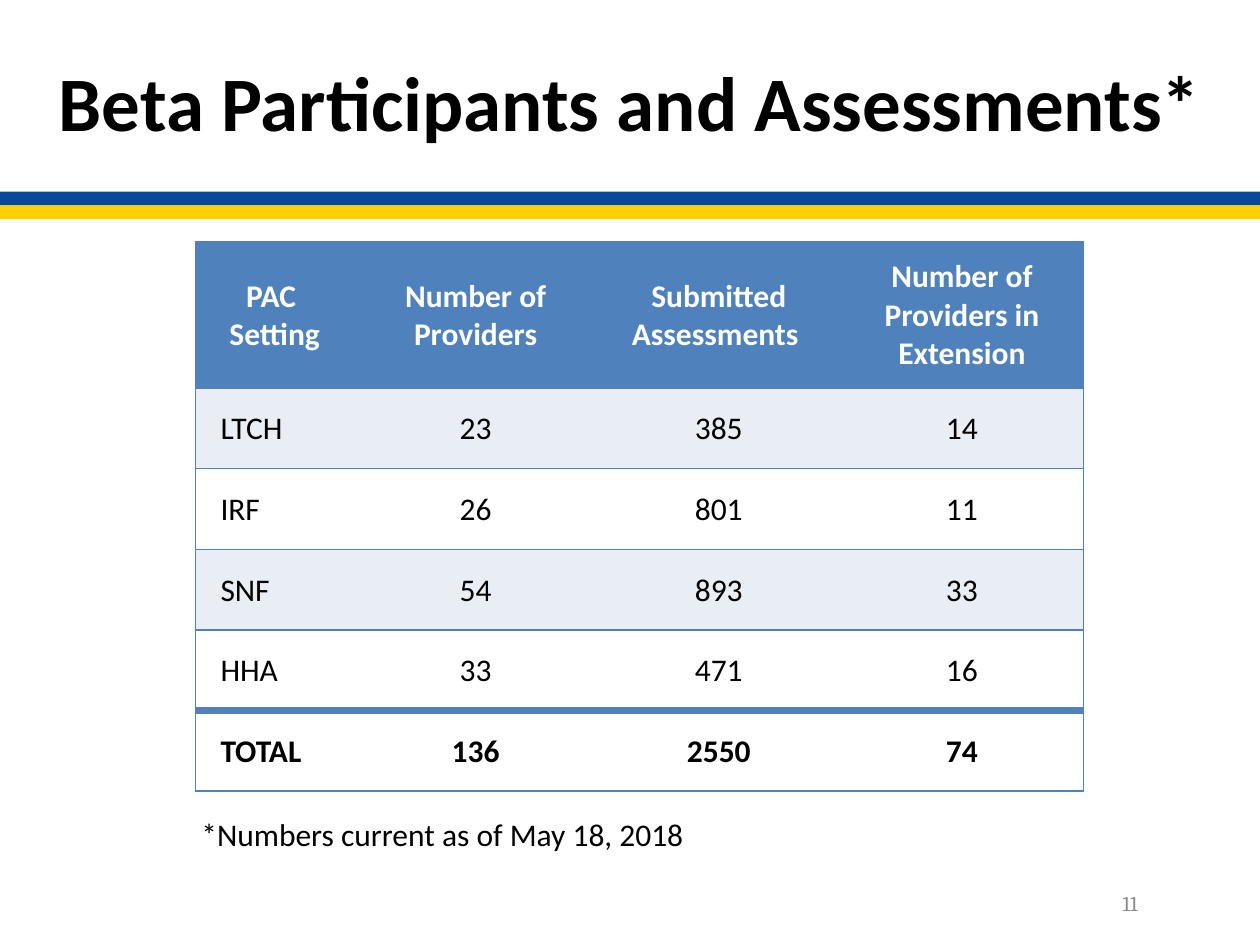
from lxml import etree
from pptx import Presentation
from pptx.dml.color import RGBColor
from pptx.enum.shapes import MSO_SHAPE
from pptx.enum.text import MSO_ANCHOR, PP_ALIGN
from pptx.oxml.ns import qn
from pptx.util import Inches, Pt

RECTANGLE = MSO_SHAPE.RECTANGLE
MIDDLE, TOP = MSO_ANCHOR.MIDDLE, MSO_ANCHOR.TOP
LEFT, CENTER = PP_ALIGN.LEFT, PP_ALIGN.CENTER

# Content
TITLE = "Beta Participants and Assessments*"
HEADER = ["PAC \nSetting", "Number of Providers", "Submitted Assessments ",
          "Number of Providers in Extension"]
SETTINGS = [
    ("LTCH", 23, 385, 14),
    ("IRF", 26, 801, 11),
    ("SNF", 54, 893, 33),
    ("HHA", 33, 471, 16),
]
TOTAL = ("TOTAL", 136, 2550, 74)
FOOTNOTE = "*Numbers current as of May 18, 2018"
PAGE_NUMBER = "11"

COLORS = {"black": "000000", "white": "FFFFFF", "gray": "888888",
          "blue": "08499C", "yellow": "FFD004",
          "table": "4F81BD", "band": "E9EDF4"}

# Layout in inches
WIDTH, HEIGHT = 10, 7.5
STRIPE_TOP, STRIPE_HEIGHT = 1.52, 0.11
TABLE_LEFT, TABLE_TOP = 1.55, 1.92
COLUMNS = [1.26] + [1.93] * 3
ROWS = [1.16] + [0.64] * 5
THIN, THICK = 1, 4


def color(name):
    return RGBColor.from_string(COLORS[name])


def write(frame, text, size, ink, bold=False, align=LEFT, font="Calibri"):
    for index, line in enumerate(text.split("\n")):
        paragraph = frame.add_paragraph() if index else frame.paragraphs[0]
        paragraph.alignment = align
        run = paragraph.add_run()
        run.text = line
        run.font.name = font
        run.font.size = Pt(size)
        run.font.bold = bold
        run.font.color.rgb = color(ink)


def add_text(slide, box, text, size, ink, anchor=TOP, margins=None, **style):
    frame = slide.shapes.add_textbox(*map(Inches, box)).text_frame
    frame.word_wrap = True
    frame.vertical_anchor = anchor
    if margins:
        set_margins(frame, margins)
    write(frame, text, size, ink, **style)


def set_margins(holder, margins):
    (holder.margin_left, holder.margin_top,
     holder.margin_right, holder.margin_bottom) = map(Inches, margins)


def set_borders(cell, widths):
    """Draw left, right, top and bottom borders; a width of 0 hides one."""
    properties = cell._tc.get_or_add_tcPr()
    for side, width in zip("LRTB", widths):
        line = etree.SubElement(properties, qn(f"a:ln{side}"), w=str(Pt(width)))
        if width:
            fill = etree.SubElement(line, qn("a:solidFill"))
            etree.SubElement(fill, qn("a:srgbClr"), val=COLORS["table"])
        else:
            etree.SubElement(line, qn("a:noFill"))


def add_stripes(slide):
    for index, name in enumerate(["blue", "yellow"]):
        top = STRIPE_TOP + index * STRIPE_HEIGHT
        stripe = slide.shapes.add_shape(
            RECTANGLE, 0, Inches(top), Inches(WIDTH), Inches(STRIPE_HEIGHT))
        stripe.shadow.inherit = False
        stripe.fill.solid()
        stripe.fill.fore_color.rgb = color(name)
        stripe.line.fill.background()


def add_participants_table(slide):
    records = [HEADER, *SETTINGS, TOTAL]
    table = slide.shapes.add_table(
        len(ROWS), len(COLUMNS), Inches(TABLE_LEFT), Inches(TABLE_TOP),
        Inches(sum(COLUMNS)), Inches(sum(ROWS))).table
    for column, width in zip(table.columns, COLUMNS):
        column.width = Inches(width)
    for row, height in zip(table.rows, ROWS):
        row.height = Inches(height)

    last_row, last_column = len(ROWS) - 1, len(COLUMNS) - 1
    for r, record in enumerate(records):
        is_header, is_total = r == 0, r == last_row
        if is_header:
            background = "table"
        else:
            background = "band" if r % 2 and not is_total else "white"
        for c, value in enumerate(record):
            is_label = c == 0 and not is_header
            cell = table.cell(r, c)
            cell.vertical_anchor = MIDDLE
            set_margins(cell, (0.2 if is_label else 0.01, 0.01, 0.01, 0))
            set_borders(cell, (
                THIN if c == 0 else 0,
                THIN if c == last_column else 0,
                THICK if is_total else THIN,
                THICK if r == last_row - 1 else THIN))
            cell.fill.solid()
            cell.fill.fore_color.rgb = color(background)
            write(cell.text_frame, str(value), 18,
                  "white" if is_header else "black",
                  bold=is_header or is_total,
                  align=LEFT if is_label else CENTER)


def main():
    presentation = Presentation()
    presentation.slide_width = Inches(WIDTH)
    presentation.slide_height = Inches(HEIGHT)
    slide = presentation.slides.add_slide(presentation.slide_layouts[6])

    add_stripes(slide)
    add_text(slide, (0.1, 0.43, 9.81, 0.74), TITLE, 44, "black",
             anchor=MIDDLE, margins=(0, 0, 0, 0), bold=True, align=CENTER)
    add_participants_table(slide)
    add_text(slide, (1.5, 6.42, 4.67, 0.4), FOOTNOTE, 18, "black")
    add_text(slide, (8.83, 7.07, 0.59, 0.18), PAGE_NUMBER, 12, "gray",
             margins=(0.08, 0, 0, 0), font="Cambria")

    presentation.save("out.pptx")


if __name__ == "__main__":
    main()
